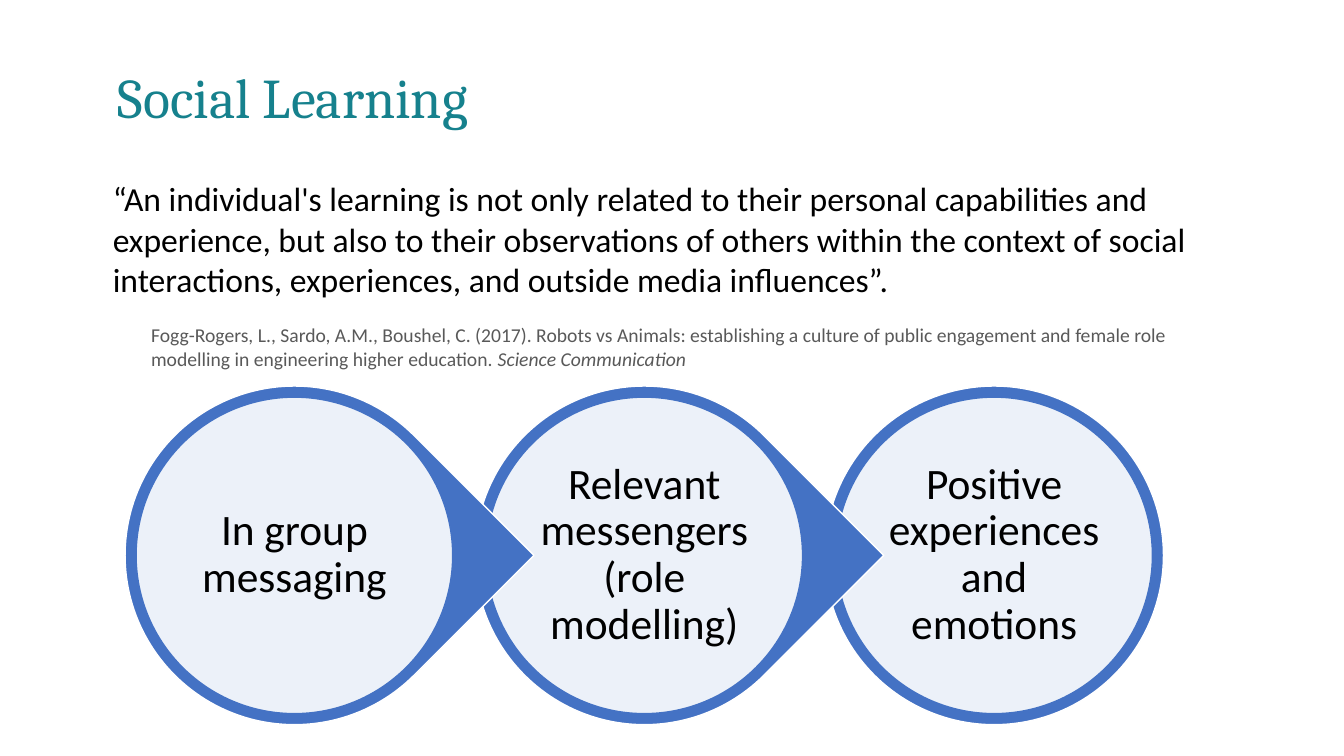
import pptx
import pptx.util
import pptx.dml.color
import pptx.enum.shapes
import pptx.enum.text
import pptx.oxml
import pptx.oxml.ns

Inches = pptx.util.Inches
Pt = pptx.util.Pt
Shape = pptx.enum.shapes.MSO_SHAPE
Align = pptx.enum.text.PP_ALIGN
Anchor = pptx.enum.text.MSO_ANCHOR

COLORS = {
    "teal": "16818D",
    "blue": "4472C4",
    "white": "FFFFFF",
    "black": "000000",
    "grey": "595959",
}
QUOTE = (
    "“An individual's learning is not only related to their personal "
    "capabilities and experience, but also to their observations of others "
    "within the context of social interactions, experiences, and outside "
    "media influences”."
)
SOURCE = (
    "Fogg-Rogers, L., Sardo, A.M., Boushel, C. (2017). Robots vs Animals: "
    "establishing a culture of public engagement and female role modelling "
    "in engineering higher education. "
)
JOURNAL = "Science Communication"
STEPS = [
    "In group messaging",
    "Relevant messengers (role modelling)",
    "Positive experiences and emotions",
]


def color(name):
    return pptx.dml.color.RGBColor.from_string(COLORS[name])


def style(run, size, tint, face="Calibri"):
    run.font.size = Pt(size)
    run.font.name = face
    run.font.color.rgb = color(tint)


def inset(frame, gap):
    frame.margin_left = frame.margin_right = Inches(gap)
    frame.margin_top = frame.margin_bottom = Inches(gap)


def add_title(slide, left, top, width, height):
    title = slide.shapes.title
    title.left, title.top = Inches(left), Inches(top)
    title.width, title.height = Inches(width), Inches(height)
    frame = title.text_frame
    frame.text = "Social Learning"
    frame.vertical_anchor = Anchor.TOP
    inset(frame, 0)
    line = frame.paragraphs[0]
    line.alignment = Align.LEFT
    line.line_spacing = Pt(42)
    style(line.runs[0], 40, "teal", "Cambria")


def add_quote(slide, left, top, width, height):
    box = slide.shapes.add_textbox(
        Inches(left), Inches(top), Inches(width), Inches(height))
    frame = box.text_frame
    frame.word_wrap = True
    frame.text = QUOTE
    style(frame.paragraphs[0].runs[0], 24, "black")
    cite = frame.add_paragraph()
    cite.space_before = Pt(17)
    cite._p.get_or_add_pPr().set("marL", str(Inches(0.38)))
    for text in (SOURCE, JOURNAL):
        run = cite.add_run()
        run.text = text
        run.font.italic = text == JOURNAL
        style(run, 14, "grey")


def add_round(slide, kind, left, top, size, fill, edge):
    shape = slide.shapes.add_shape(
        kind, Inches(left), Inches(top), Inches(size), Inches(size))
    shape.shadow.inherit = False
    shape.fill.solid()
    shape.fill.fore_color.rgb = color(fill)
    shape.line.color.rgb = color(edge)
    shape.line.width = Pt(1)
    return shape


def add_step(slide, left, top, size, text, last):
    """Place a blue ring, pointed unless last, with a pale labelled disc."""
    kind = Shape.OVAL if last else Shape.TEAR
    ring = add_round(slide, kind, left, top, size, "blue", "white")
    if not last:
        ring.rotation = 45

    rim = 0.11
    disc = add_round(slide, Shape.OVAL, left + rim, top + rim,
                     size - 2 * rim, "white", "blue")
    tint = disc.fill._xPr.find(".//" + pptx.oxml.ns.qn("a:srgbClr"))
    alpha = pptx.oxml.parse_xml(
        "<a:alpha %s val='90000'/>" % pptx.oxml.ns.nsdecls("a"))
    tint.append(alpha)

    frame = disc.text_frame
    frame.word_wrap = True
    frame.vertical_anchor = Anchor.MIDDLE
    inset(frame, 0.03)
    frame.text = text
    label = frame.paragraphs[0]
    label.alignment = Align.CENTER
    label.line_spacing = 0.9
    style(label.runs[0], 31, "black")


def add_chain(slide, left, top, size, pitch):
    """Draw the steps from right to left, so each point overlaps the next."""
    end = len(STEPS) - 1
    for i in range(end, -1, -1):
        add_step(slide, left + i * pitch, top, size, STEPS[i], i == end)


def main():
    deck = pptx.Presentation()
    deck.slide_width, deck.slide_height = Inches(13.33), Inches(7.5)
    slide = deck.slides.add_slide(deck.slide_layouts.get_by_name("Title Only"))
    add_title(slide, 1.17, 0.7, 9.38, 0.71)
    add_quote(slide, 1.02, 1.72, 11.25, 2.36)
    add_chain(slide, 1.24, 3.83, 3.36, 3.47)
    deck.save("out.pptx")


if __name__ == "__main__":
    main()
